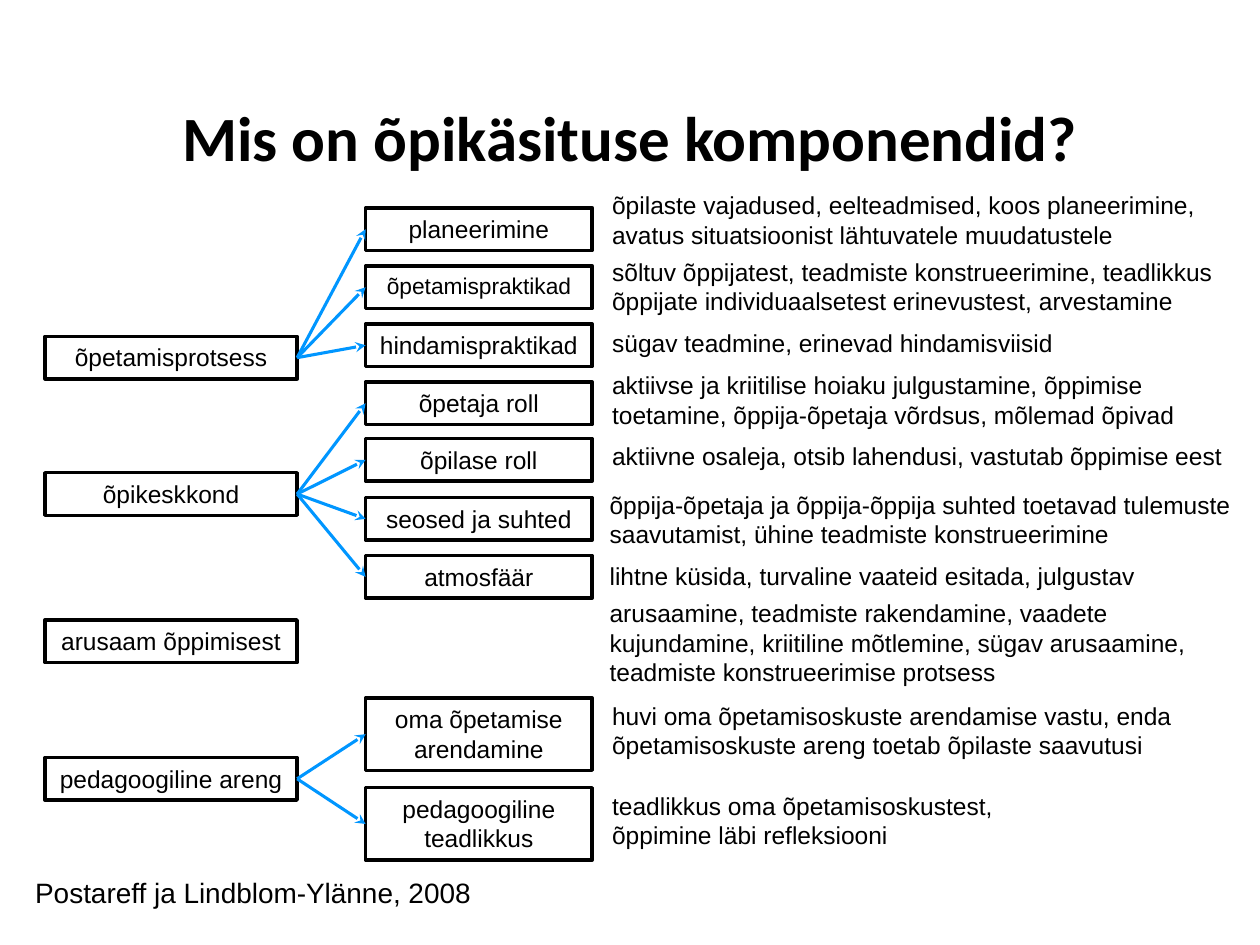
from dataclasses import dataclass

from lxml.etree import SubElement
from pptx import Presentation
from pptx.dml.color import RGBColor
from pptx.enum.shapes import MSO_CONNECTOR, MSO_SHAPE
from pptx.enum.text import MSO_ANCHOR, PP_ALIGN
from pptx.oxml.ns import qn
from pptx.util import Cm, Pt


@dataclass(frozen=True)
class Theme:
    heading_font: str = "Calibri"
    body_font: str = "Arial"
    ink: RGBColor = RGBColor(0, 0, 0)
    paper: RGBColor = RGBColor(255, 255, 255)
    arrow: RGBColor = RGBColor(0x00, 0x96, 0xFF)
    title_size: int = 36
    source_size: int = 16
    body_size: int = 14
    small_size: int = 13
    border: float = 2
    arrow_width: float = 1.75


GROUP_X, GROUP_W = 0.91, 5.08
COMPONENT_X, COMPONENT_W = 7.37, 4.57
DETAIL_W = 13.1

GROUPS = [
    ("õpetamisprotsess", 6.78, [
        ("planeerimine", 4.19, 1),
        ("õpetamispraktikad", 5.36, 1),
        ("hindamispraktikad", 6.53, 1),
    ]),
    ("õpikeskkond", 9.53, [
        ("õpetaja roll", 7.7, 1),
        ("õpilase roll", 8.84, 1),
        ("seosed ja suhted", 10.03, 1),
        ("atmosfäär", 11.2, 1),
    ]),
    ("arusaam õppimisest", 12.5, []),
    ("pedagoogiline areng", 15.27, [
        ("oma õpetamise arendamine", 14.07, 2),
        ("pedagoogiline teadlikkus", 15.88, 2),
    ]),
]

DETAILS = [
    (12.09, 3.71, 2, "õpilaste vajadused, eelteadmised, koos planeerimine, "
     "avatus situatsioonist lähtuvatele muudatustele"),
    (12.09, 5.05, 2, "sõltuv õppijatest, teadmiste konstrueerimine, teadlikkus "
     "õppijate individuaalsetest erinevustest, arvestamine"),
    (12.09, 6.48, 1, "sügav teadmine, erinevad hindamisviisid"),
    (12.09, 7.34, 2, "aktiivse ja kriitilise hoiaku julgustamine, õppimise "
     "toetamine, õppija-õpetaja võrdsus, mõlemad õpivad"),
    (12.09, 8.76, 1, "aktiivne osaleja, otsib lahendusi, vastutab õppimise eest"),
    (12.04, 9.75, 2, "õppija-õpetaja ja õppija-õppija suhted toetavad tulemuste "
     "saavutamist, ühine teadmiste konstrueerimine"),
    (12.04, 11.18, 1, "lihtne küsida, turvaline vaateid esitada, julgustav"),
    (12.04, 11.94, 3, "arusaamine, teadmiste rakendamine, vaadete kujundamine, "
     "kriitiline mõtlemine, sügav arusaamine, teadmiste konstrueerimise protsess"),
    (12.09, 14, 2, "huvi oma õpetamisoskuste arendamise vastu, enda "
     "õpetamisoskuste areng toetab õpilaste saavutusi"),
    (12.09, 15.82, 2, "teadlikkus oma õpetamisoskustest,\võppimine läbi refleksiooni"),
]


def text_height(lines):
    return Cm(0.86 + 0.6 * (lines - 1))


class Diagram:
    def __init__(self, slide, theme):
        self.s = slide
        self.theme = theme

    def set_text(self, tf, text, size, font=None, align=PP_ALIGN.LEFT, bold=False):
        tf.word_wrap = True
        p = tf.paragraphs[0]
        p.text = text
        p.alignment = align
        p.font.name = font or self.theme.body_font
        p.font.size = Pt(size)
        p.font.bold = bold
        p.font.color.rgb = self.theme.ink
        return p

    def title(self, text):
        sp = self.s.shapes.title
        sp.left, sp.top, sp.width, sp.height = Cm(1.75), Cm(1.01), Cm(21.9), Cm(3.68)
        tf = sp.text_frame
        tf.vertical_anchor = MSO_ANCHOR.MIDDLE
        p = self.set_text(tf, text, self.theme.title_size, self.theme.heading_font,
                          PP_ALIGN.CENTER, True)
        p.line_spacing = 0.9

    def box(self, x, y, w, text, lines=1, size=None):
        sp = self.s.shapes.add_shape(MSO_SHAPE.RECTANGLE, Cm(x), Cm(y), Cm(w),
                                     text_height(lines))
        sp.shadow.inherit = False
        sp.fill.solid()
        sp.fill.fore_color.rgb = self.theme.paper
        sp.line.color.rgb = self.theme.ink
        sp.line.width = Pt(self.theme.border)
        sp.text_frame.vertical_anchor = MSO_ANCHOR.TOP
        self.set_text(sp.text_frame, text, size or self.theme.body_size,
                      align=PP_ALIGN.CENTER)
        return sp

    def label(self, x, y, w, text, lines=1, size=None):
        sp = self.s.shapes.add_textbox(Cm(x), Cm(y), Cm(w), text_height(lines))
        self.set_text(sp.text_frame, text, size or self.theme.body_size)

    def arrow(self, start, end):
        cxn = self.s.shapes.add_connector(MSO_CONNECTOR.STRAIGHT, 0, 0, 0, 0)
        cxn.begin_connect(start, 3)
        cxn.end_connect(end, 1)
        cxn.line.color.rgb = self.theme.arrow
        cxn.line.width = Pt(self.theme.arrow_width)
        props = cxn._element.spPr
        SubElement(props.find(qn("a:ln")), qn("a:tailEnd"), type="stealth")
        SubElement(props, qn("a:effectLst"))


def main():
    prs = Presentation()
    prs.slide_width, prs.slide_height = Cm(25.4), Cm(19.05)
    theme = Theme()
    diagram = Diagram(prs.slides.add_slide(prs.slide_layouts[5]), theme)

    diagram.title("Mis on õpikäsituse komponendid?")
    for group, group_y, components in GROUPS:
        start = diagram.box(GROUP_X, group_y, GROUP_W, group)
        for name, y, lines in components:
            size = theme.small_size if name == "õpetamispraktikad" else theme.body_size
            end = diagram.box(COMPONENT_X, y, COMPONENT_W, name, lines, size)
            diagram.arrow(start, end)
    for x, y, lines, text in DETAILS:
        diagram.label(x, y, DETAIL_W, text, lines)
    diagram.label(0.46, 17.53, 9.6, "Postareff ja Lindblom-Ylänne, 2008",
                  size=theme.source_size)

    prs.save("out.pptx")


if __name__ == "__main__":
    main()
